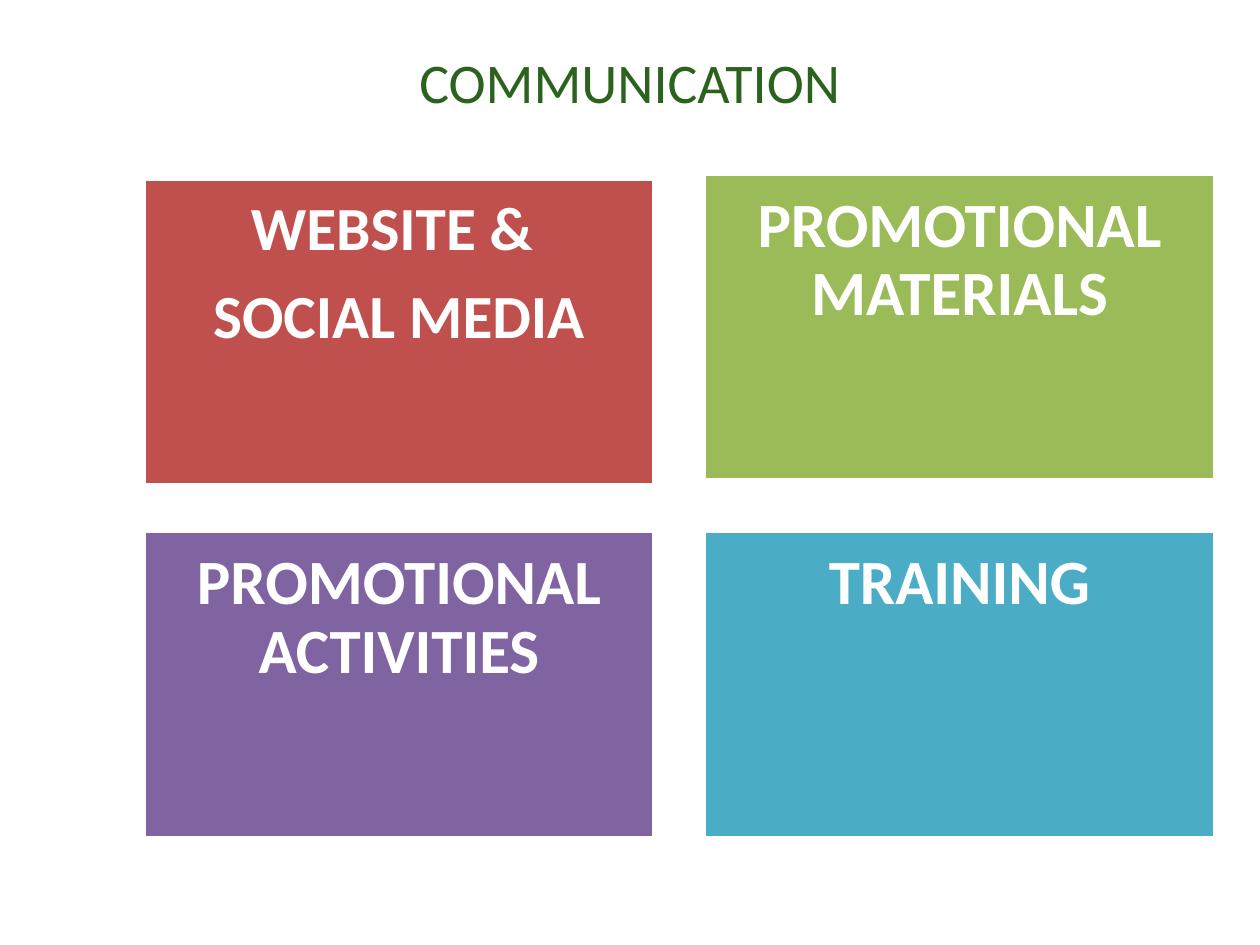
from pptx import Presentation
from pptx.dml.color import RGBColor
from pptx.enum import shapes, text
from pptx.util import Cm, Pt

HUES = {
    "title": "2B621D",
    "white": "FFFFFF",
    "red": "C0504D",
    "green": "9BBB59",
    "purple": "8064A2",
    "blue": "4BACC6",
}
FACE = "Calibri"
WIDE, HIGH = 10.29, 6.17
STEP_X, STEP_Y = 11.3, 7.11

# column, row, lift, hue, size, lines
TILES = [
    (0, 0, 0, "red", 35, ["WEBSITE & ", "SOCIAL MEDIA"]),
    (1, 0, 0.1, "green", 36, ["PROMOTIONAL MATERIALS"]),
    (0, 1, 0, "purple", 36, ["PROMOTIONAL ACTIVITIES"]),
    (1, 1, 0, "blue", 36, ["TRAINING"]),
]


def tint(name):
    return RGBColor.from_string(HUES[name])


def style(para, size, hue, bold):
    para.alignment = text.PP_ALIGN.CENTER
    font = para.font
    font.name, font.size, font.bold = FACE, Pt(size), bold
    font.color.rgb = tint(hue)


def add_title(slide, left, top, wide, high):
    title = slide.shapes.title
    title.left, title.top = Cm(left), Cm(top)
    title.width, title.height = Cm(wide), Cm(high)
    frame = title.text_frame
    frame.text = "COMMUNICATION"
    frame.vertical_anchor = text.MSO_ANCHOR.TOP
    style(frame.paragraphs[0], 32, "title", False)


def add_tile(slide, left, top, hue, size, lines):
    tile = slide.shapes.add_shape(
        shapes.MSO_SHAPE.RECTANGLE, Cm(left), Cm(top), Cm(WIDE), Cm(HIGH))
    tile.shadow.inherit = False
    tile.fill.solid()
    tile.fill.fore_color.rgb = tint(hue)
    tile.line.color.rgb = tint("white")
    tile.line.width = Pt(2)

    frame = tile.text_frame
    frame.word_wrap = True
    frame.vertical_anchor = text.MSO_ANCHOR.TOP
    frame.margin_left = frame.margin_right = Cm(0.38)
    frame.margin_top = frame.margin_bottom = Cm(0.38)
    frame.text = "\n".join(lines)
    for para in frame.paragraphs:
        para.line_spacing = 0.9
        para.space_after = Pt(0.35 * size)
        style(para, size, "white", True)


def add_grid(slide, left, top):
    for col, row, lift, hue, size, lines in TILES:
        add_tile(slide, left + col * STEP_X, top + row * STEP_Y - lift,
                 hue, size, lines)


def main():
    deck = Presentation()
    deck.slide_width, deck.slide_height = Cm(25.4), Cm(19.05)
    slide = deck.slides.add_slide(deck.slide_layouts[5])
    add_title(slide, 1.27, 0.84, 22.86, 2.11)
    add_grid(slide, 2.9, 3.61)
    deck.save("out.pptx")


if __name__ == "__main__":
    main()
